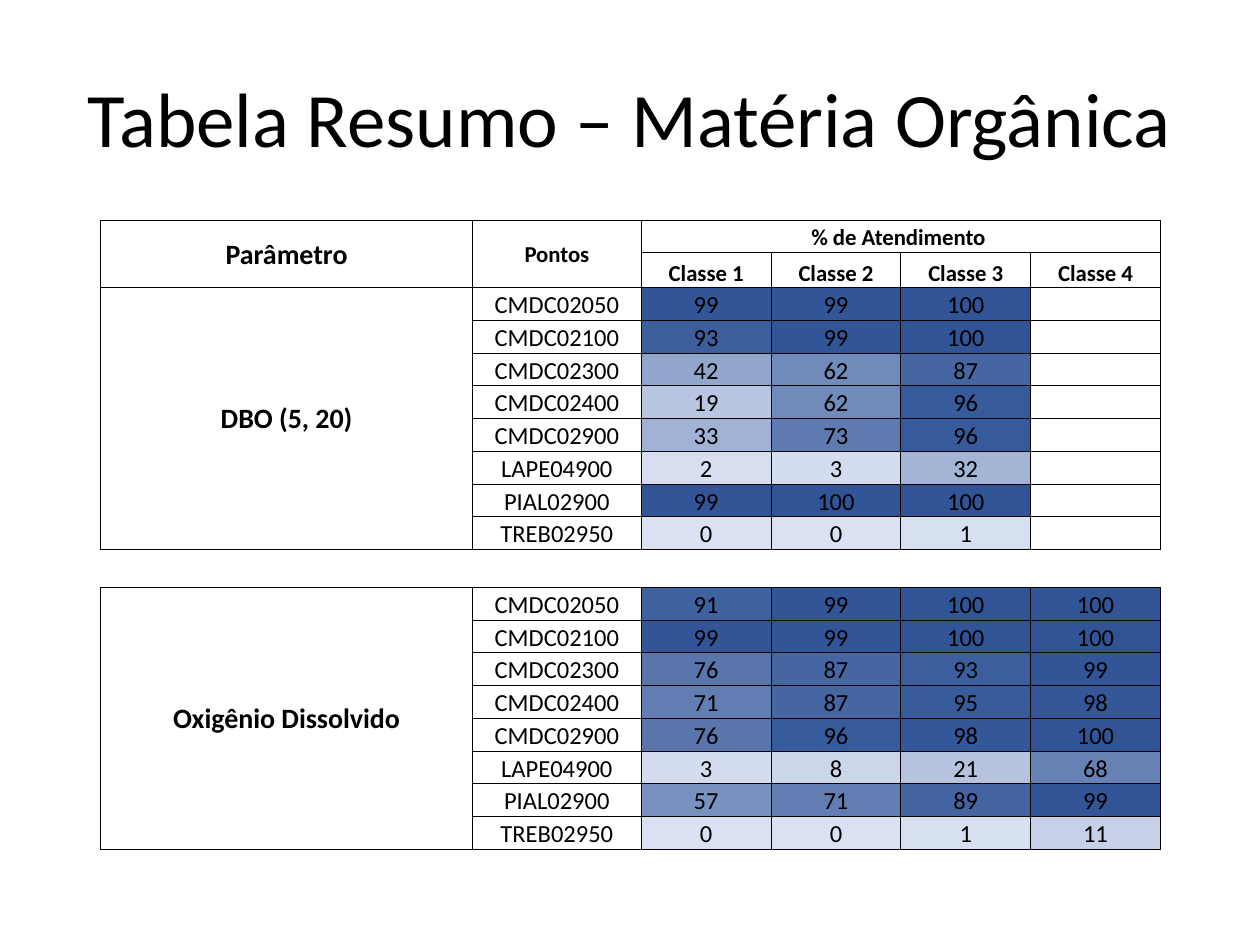
"""Build a slide with a table of water quality compliance by class."""
from pptx import Presentation
from pptx.dml.color import RGBColor
from pptx.enum.text import MSO_ANCHOR, PP_ALIGN
from pptx.oxml.ns import qn
from pptx.util import Inches, Pt
from lxml import etree

CENTER = PP_ALIGN.CENTER
MIDDLE, BOTTOM = MSO_ANCHOR.MIDDLE, MSO_ANCHOR.BOTTOM
FONT = "Calibri"
COLORS = {"text": "000000", "line": "000000", "low": "D9E1F2", "high": "305496"}

COL_WIDTHS = [2.95, 1.34] + [1.03] * 4
HEADER_HEIGHT, ROW_HEIGHT, GAP_HEIGHT = 0.25, 0.26, 0.3
POINTS = ["CMDC02050", "CMDC02100", "CMDC02300", "CMDC02400",
          "CMDC02900", "LAPE04900", "PIAL02900", "TREB02950"]
GROUPS = [
    ("DBO (5, 20)", [
        (99, 99, 100), (93, 99, 100), (42, 62, 87), (19, 62, 96),
        (33, 73, 96), (2, 3, 32), (99, 100, 100), (0, 0, 1)]),
    ("Oxigênio Dissolvido", [
        (91, 99, 100, 100), (99, 99, 100, 100), (76, 87, 93, 99),
        (71, 87, 95, 98), (76, 96, 98, 100), (3, 8, 21, 68),
        (57, 71, 89, 99), (0, 0, 1, 11)]),
]
FIRST_ROW = 2
GROUP_STEP = len(POINTS) + 1
GAP_ROW = FIRST_ROW + len(POINTS)


def scale_color(value):
    """Return the colour of a percentage between the low and high ends."""
    low = RGBColor.from_string(COLORS["low"])
    high = RGBColor.from_string(COLORS["high"])
    return RGBColor(*(round(a + (b - a) * value / 100) for a, b in zip(low, high)))


def add_run(p, text, size, bold=False):
    """Add a formatted run to a paragraph."""
    r = p.add_run()
    r.text = text
    r.font.name = FONT
    r.font.size = Pt(size)
    r.font.bold = bold
    r.font.color.rgb = RGBColor.from_string(COLORS["text"])


def add_title(slide, text):
    """Place and fill the title placeholder."""
    sp = slide.shapes.title
    sp.left, sp.top, sp.width, sp.height = map(Inches, (0.5, 0.3, 9, 1.25))
    tf = sp.text_frame
    tf.word_wrap = True
    tf.vertical_anchor = MIDDLE
    p = tf.paragraphs[0]
    p.alignment = CENTER
    add_run(p, text, 44)


def set_borders(cell, visible):
    """Draw the named sides of a cell and clear the others."""
    tc_pr = cell._tc.get_or_add_tcPr()
    for side in "LRTB":
        ln = etree.SubElement(tc_pr, qn(f"a:ln{side}"), w=str(Pt(0.5)))
        if side in visible:
            fill = etree.SubElement(ln, qn("a:solidFill"))
            etree.SubElement(fill, qn("a:srgbClr"), val=COLORS["line"])
        else:
            etree.SubElement(ln, qn("a:noFill"))


def prepare_cell(cell, visible):
    """Give a cell its margins, borders, clear fill and base text size."""
    cell.margin_left = cell.margin_right = cell.margin_top = Inches(0.01)
    cell.margin_bottom = 0
    set_borders(cell, visible)
    cell.fill.background()
    p = cell.text_frame.paragraphs[0]
    etree.SubElement(p._p, qn("a:endParaRPr"), sz="1400")


def write_cell(cell, text, size, bold=False, anchor=BOTTOM):
    """Write centred text in a cell."""
    cell.vertical_anchor = anchor
    p = cell.text_frame.paragraphs[0]
    p.alignment = CENTER
    add_run(p, text, size, bold)


def write_header(table):
    """Write the two header rows."""
    for col, text, size in ((0, "Parâmetro", 16), (1, "Pontos", 13)):
        table.cell(0, col).merge(table.cell(1, col))
        write_cell(table.cell(0, col), text, size, True, MIDDLE)
    table.cell(0, 2).merge(table.cell(0, 5))
    write_cell(table.cell(0, 2), "% de Atendimento ", 13, True)
    for number in range(1, 5):
        write_cell(table.cell(1, number + 1), f"Classe {number}", 13, True)


def write_group(table, top, name, rows):
    """Write one parameter with its points and shaded percentages."""
    table.cell(top, 0).merge(table.cell(top + len(rows) - 1, 0))
    write_cell(table.cell(top, 0), name, 16, True, MIDDLE)
    for row, (point, values) in enumerate(zip(POINTS, rows), top):
        write_cell(table.cell(row, 1), point, 14)
        for col, value in enumerate(values, 2):
            cell = table.cell(row, col)
            write_cell(cell, str(value), 14)
            cell.fill.solid()
            cell.fill.fore_color.rgb = scale_color(value)


def add_summary_table(slide):
    """Add the summary table."""
    heights = [HEADER_HEIGHT] * FIRST_ROW + [ROW_HEIGHT] * (2 * len(POINTS) + 1)
    heights[GAP_ROW] = GAP_HEIGHT
    frame = slide.shapes.add_table(
        len(heights), len(COL_WIDTHS), Inches(0.8), Inches(1.75),
        Inches(sum(COL_WIDTHS)), Inches(sum(heights)))
    table = frame.table
    table.first_row = table.horz_banding = False
    for column, width in zip(table.columns, COL_WIDTHS):
        column.width = Inches(width)
    for index, (row, height) in enumerate(zip(table.rows, heights)):
        row.height = Inches(height)
        for cell in row.cells:
            prepare_cell(cell, "TB" if index == GAP_ROW else "LRTB")
    write_header(table)
    for index, (name, rows) in enumerate(GROUPS):
        write_group(table, FIRST_ROW + index * GROUP_STEP, name, rows)


def main():
    """Build and save the slide."""
    prs = Presentation()
    prs.slide_width, prs.slide_height = Inches(10), Inches(7.5)
    slide = prs.slides.add_slide(prs.slide_layouts[5])
    add_title(slide, "Tabela Resumo – Matéria Orgânica")
    add_summary_table(slide)
    prs.save("out.pptx")


if __name__ == "__main__":
    main()
